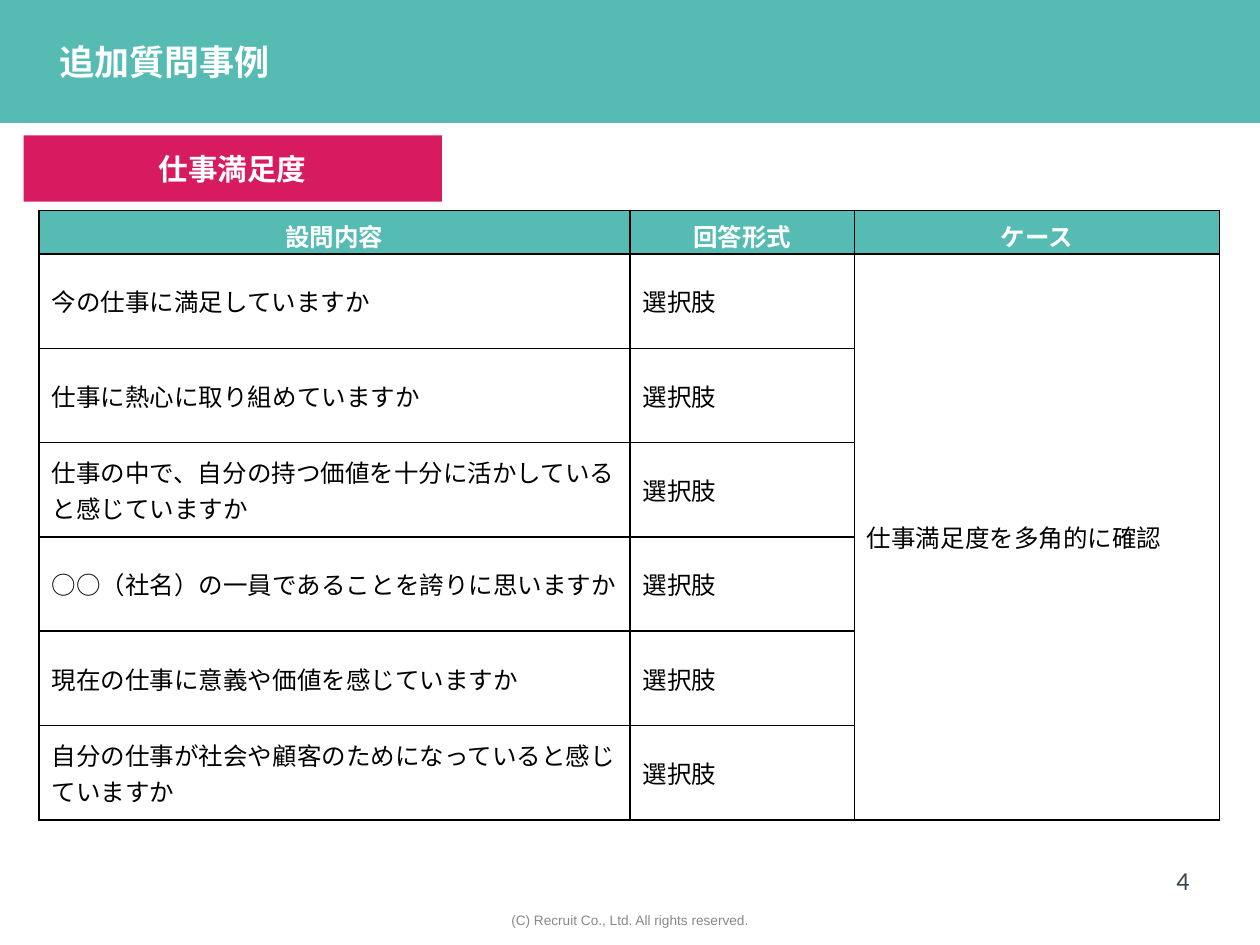
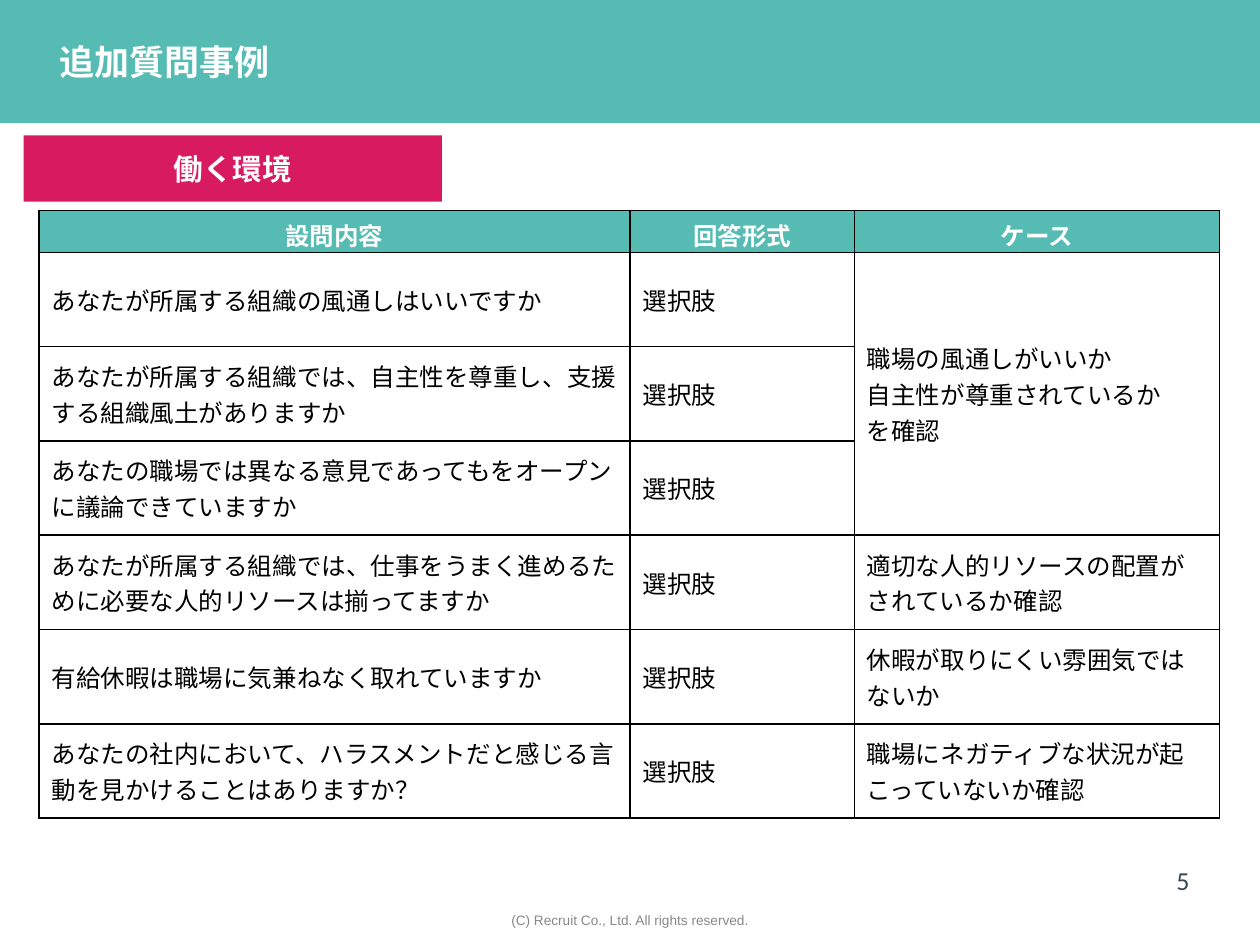
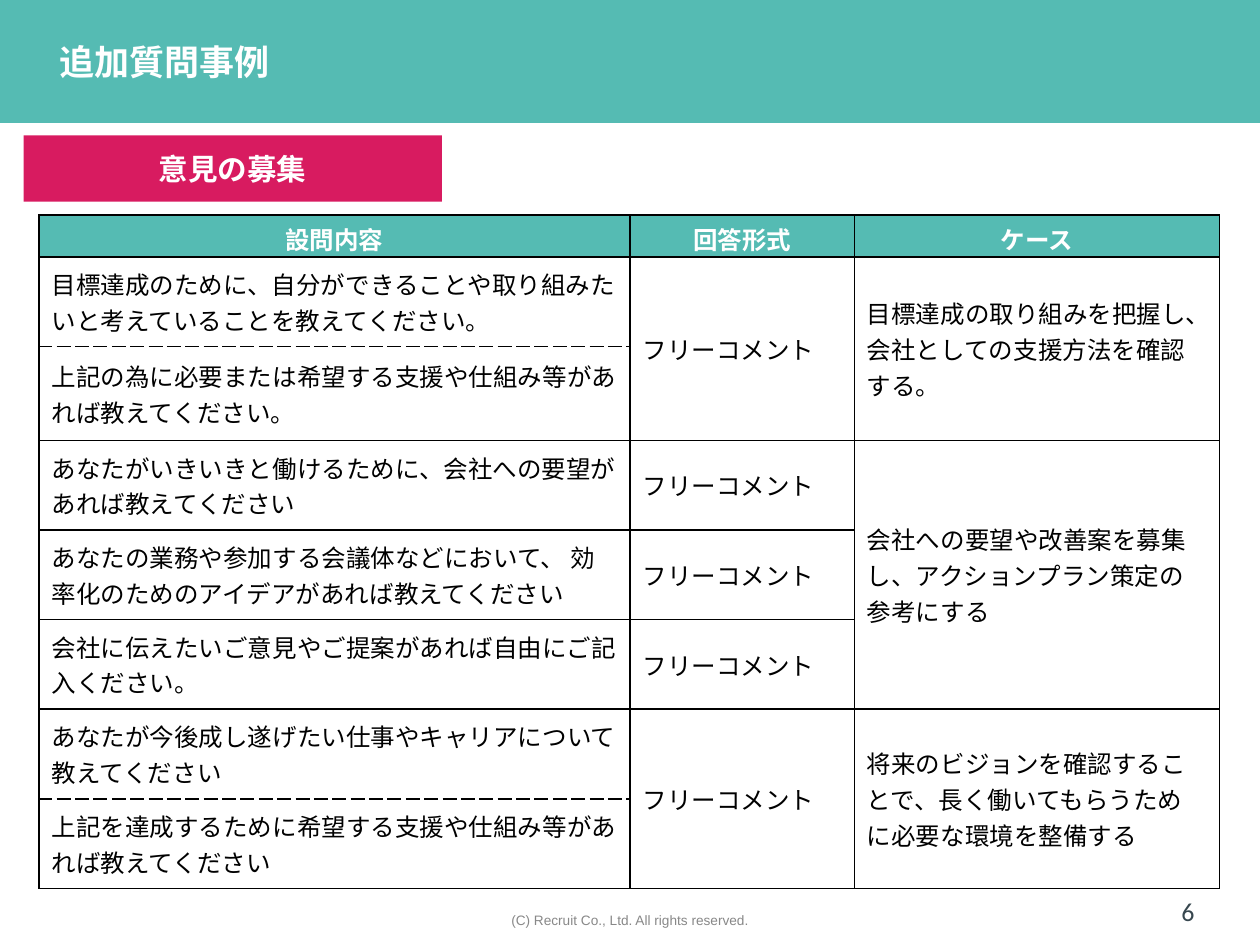
import pptx
import pptx.dml.color
import pptx.enum.shapes
import pptx.enum.text
import pptx.oxml
import pptx.oxml.ns
import pptx.util

Pt = pptx.util.Pt
RGBColor = pptx.dml.color.RGBColor
ALIGN = pptx.enum.text.PP_ALIGN
MIDDLE = pptx.enum.text.MSO_ANCHOR.MIDDLE
RECT = pptx.enum.shapes.MSO_SHAPE.RECTANGLE

TEAL = RGBColor(0x55, 0xBB, 0xB3)
PINK = RGBColor(0xD8, 0x1B, 0x60)
SLATE = RGBColor(0x37, 0x47, 0x4F)
GRAY = RGBColor(0x88, 0x88, 0x88)
WHITE = RGBColor(0xFF, 0xFF, 0xFF)
BLACK = RGBColor(0, 0, 0)
JAPANESE = "Noto Sans CJK JP"

TITLE = "追加質問事例"
COPYRIGHT = "(C) Recruit Co., Ltd. All rights reserved."
HEADERS = ("設問内容", "回答形式", "ケース")
COLUMN_WIDTHS = (337.7, 128.2, 208.8)
CHOICE = "選択肢"
COMMENT = "フリーコメント"

# Each row is question, answer type, case; None continues the cell above.
SATISFACTION = [
    ("今の仕事に満足していますか", CHOICE, "仕事満足度を多角的に確認"),
    ("仕事に熱心に取り組めていますか", CHOICE, None),
    ("仕事の中で、自分の持つ価値を十分に活かしていると感じていますか", CHOICE, None),
    ("○○（社名）の一員であることを誇りに思いますか", CHOICE, None),
    ("現在の仕事に意義や価値を感じていますか", CHOICE, None),
    ("自分の仕事が社会や顧客のためになっていると感じていますか", CHOICE, None),
]
ENVIRONMENT = [
    ("あなたが所属する組織の風通しはいいですか", CHOICE,
     "職場の風通しがいいか\n自主性が尊重されているか\nを確認"),
    ("あなたが所属する組織では、自主性を尊重し、支援する組織風土がありますか", CHOICE, None),
    ("あなたの職場では異なる意見であってもをオープンに議論できていますか", CHOICE, None),
    ("あなたが所属する組織では、仕事をうまく進めるために必要な人的リソースは揃ってますか",
     CHOICE, "適切な人的リソースの配置がされているか確認"),
    ("有給休暇は職場に気兼ねなく取れていますか", CHOICE, "休暇が取りにくい雰囲気ではないか"),
    ("あなたの社内において、ハラスメントだと感じる言動を見かけることはありますか？",
     CHOICE, "職場にネガティブな状況が起こっていないか確認"),
]
OPINIONS = [
    ("目標達成のために、自分ができることや取り組みたいと考えていることを教えてください。",
     COMMENT, "目標達成の取り組みを把握し、会社としての支援方法を確認する。"),
    ("上記の為に必要または希望する支援や仕組み等があれば教えてください。", None, None),
    ("あなたがいきいきと働けるために、会社への要望があれば教えてください",
     COMMENT, "会社への要望や改善案を募集し、アクションプラン策定の参考にする"),
    ("あなたの業務や参加する会議体などにおいて、 効率化のためのアイデアがあれば教えてください",
     COMMENT, None),
    ("会社に伝えたいご意見やご提案があれば自由にご記入ください。", COMMENT, None),
    ("あなたが今後成し遂げたい仕事やキャリアについて教えてください",
     COMMENT, "将来のビジョンを確認することで、長く働いてもらうために必要な環境を整備する"),
    ("上記を達成するために希望する支援や仕組み等があれば教えてください", None, None),
]


class Deck:
    def __init__(self):
        self.prs = pptx.Presentation()
        self.prs.slide_width, self.prs.slide_height = Pt(720), Pt(540)
        self.s = None

    def add_slide(self):
        self.s = self.prs.slides.add_slide(self.prs.slide_layouts[6])

    def style(self, tf, size, color, bold=False, align=ALIGN.LEFT, font=JAPANESE):
        for p in tf.paragraphs:
            p.alignment = align
            p.font.size, p.font.bold, p.font.name = Pt(size), bold, font
            p.font.color.rgb = color
            latin = p._p.pPr.find(".//" + pptx.oxml.ns.qn("a:latin"))
            latin.addnext(pptx.oxml.parse_xml(
                f'<a:ea {pptx.oxml.ns.nsdecls("a")} typeface="{font}"/>'))

    def rect(self, box, fill, text=None):
        sp = self.s.shapes.add_shape(RECT, *map(Pt, box))
        sp.shadow.inherit = False
        sp.fill.solid()
        sp.fill.fore_color.rgb = fill
        sp.line.fill.background()
        if text:
            sp.text_frame.text = text
            sp.text_frame.vertical_anchor = MIDDLE
            self.style(sp.text_frame, 16.9, WHITE, True, ALIGN.CENTER)

    def text(self, box, text, inset, *style):
        tf = self.s.shapes.add_textbox(*map(Pt, box)).text_frame
        tf.word_wrap = True
        tf.vertical_anchor = MIDDLE
        tf.margin_left = tf.margin_right = Pt(inset)
        tf.margin_top = tf.margin_bottom = Pt(3)
        tf.text = text
        self.style(tf, *style)

    def borders(self, cell, dashed):
        """Draw all four sides; dashed holds the tags of the broken ones."""
        for side in ("lnL", "lnR", "lnT", "lnB"):
            dash = "sysDash" if side in dashed else "solid"
            cell._tc.get_or_add_tcPr().append(pptx.oxml.parse_xml(
                f'<a:{side} {pptx.oxml.ns.nsdecls("a")} w="{Pt(1)}"><a:solidFill>'
                f'<a:srgbClr val="{BLACK}"/></a:solidFill>'
                f'<a:prstDash val="{dash}"/></a:{side}>'))

    def table(self, top, rows, heights):
        grid = [HEADERS, *rows]
        table = self.s.shapes.add_table(
            len(grid), len(HEADERS), Pt(22.3), Pt(top),
            Pt(sum(COLUMN_WIDTHS)), Pt(sum(heights))).table
        table.horz_banding = False
        for column, width in zip(table.columns, COLUMN_WIDTHS):
            column.width = Pt(width)
        for row, height in zip(table.rows, heights):
            row.height = Pt(height)
        for i, texts in enumerate(grid):
            for j, text in enumerate(texts):
                self.cell(table.cell(i, j), text, i == 0, self.dashed_sides(grid, i, j))
        self.merge(table, grid)

    def dashed_sides(self, grid, i, j):
        """Questions that share one answer cell are parted by a dashed line."""
        if j:
            return ()
        follows = grid[i][1] is None
        leads = i + 1 < len(grid) and grid[i + 1][1] is None
        return ("lnT",) * follows + ("lnB",) * leads

    def cell(self, cell, text, header, dashed):
        self.borders(cell, dashed)
        cell.fill.solid()
        cell.fill.fore_color.rgb = TEAL if header else WHITE
        cell.vertical_anchor = MIDDLE
        if header:
            cell.margin_bottom = 0
        if text:
            cell.text = text
            self.style(cell.text_frame, 14, WHITE if header else BLACK, header,
                       ALIGN.CENTER if header else ALIGN.LEFT)

    def merge(self, table, grid):
        for j in range(len(HEADERS)):
            starts = [i for i, row in enumerate(grid) if row[j] is not None]
            for start, end in zip(starts, starts[1:] + [len(grid)]):
                if end - start > 1:
                    table.cell(start, j).merge(table.cell(end - 1, j))

    def question_slide(self, number, topic, rows, top, heights, number_at):
        self.add_slide()
        self.rect((0, 0, 720, 70.3), TEAL)
        self.text((31, 20.2, 406, 30.2), TITLE, 3, 20, WHITE, True)
        self.table(top, rows, heights)
        self.text((*number_at, 44.6, 26.6), str(number), 4.3,
                  14.8, SLATE, False, ALIGN.RIGHT, "Calibri")
        self.text((160, 517.7, 400, 16.6), COPYRIGHT, 2.2,
                  7.8, GRAY, False, ALIGN.CENTER, "Arial")
        self.rect((13.5, 77.3, 239, 38), PINK, topic)


def main():
    deck = Deck()
    deck.question_slide(4, "仕事満足度", SATISFACTION, 120.2,
                        [25] + [53.9] * 6, (639.4, 489.6))
    deck.question_slide(5, "働く環境", ENVIRONMENT, 120.2,
                        [24] + [53.9] * 6, (639.4, 489.6))
    deck.question_slide(6, "意見の募集", OPINIONS, 122.9,
                        [24, 51.2, 53.6] + [51.2] * 5, (642.2, 507.6))
    deck.prs.save("out.pptx")


if __name__ == "__main__":
    main()
